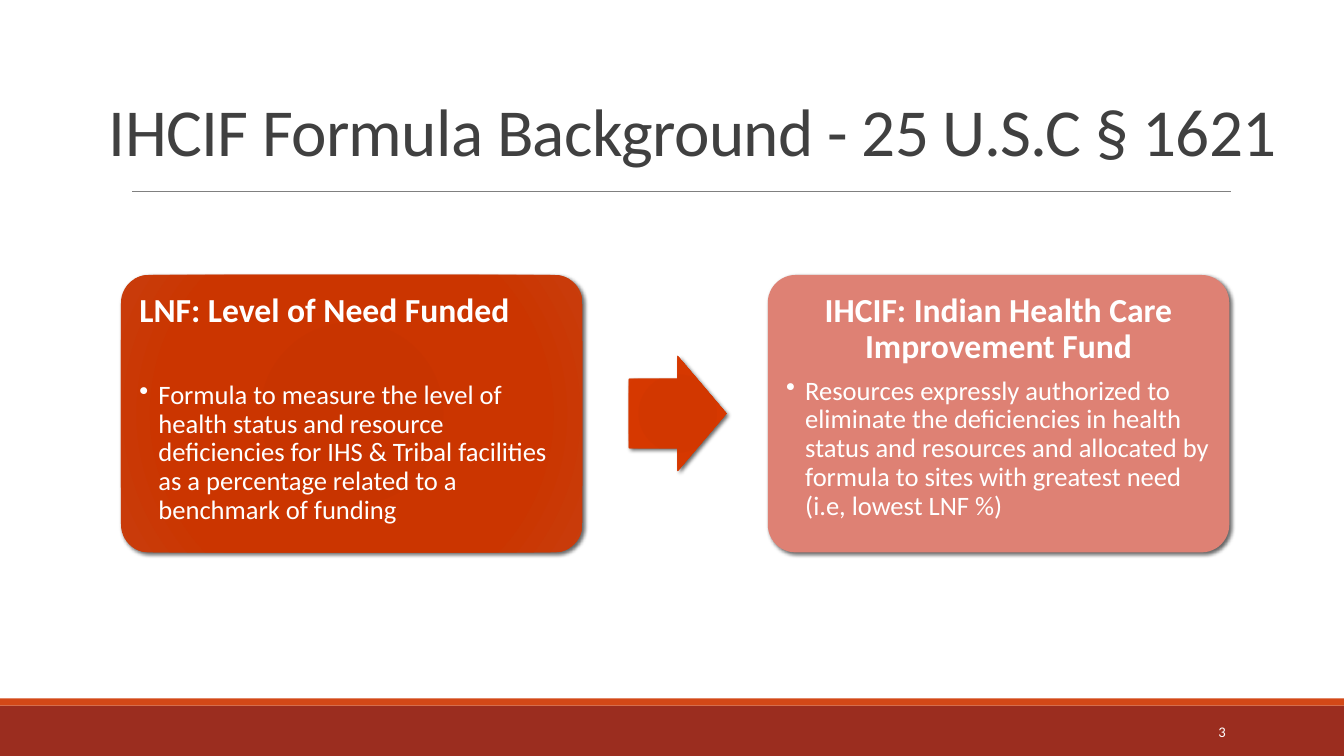
"""Build the slide that leads from the need measure to the fund it steers."""
from typing import NamedTuple

from lxml.etree import SubElement
from pptx import Presentation
from pptx.dml.color import RGBColor
from pptx.enum.shapes import MSO_CONNECTOR as Link, MSO_SHAPE as Form
from pptx.enum.text import MSO_ANCHOR as Anchor, MSO_AUTO_SIZE as Fit, PP_ALIGN as Align
from pptx.oxml.ns import qn
from pptx.shapes.autoshape import Shape
from pptx.slide import Slide
from pptx.text.text import TextFrame
from pptx.util import Cm, Pt

WIDE, HIGH = 33.87, 19.05
WHITE = "FFFFFF"
INSET = 0.46


class Box(NamedTuple):
    left: float
    top: float
    width: float
    height: float


class Card(NamedTuple):
    left: float
    paint: list[str]
    head: str
    align: Align
    gap: float
    body: str


CARDS = [
    Card(3.05, ["C63400", "C83400", "CB3500", "C83D0C"],
         "LNF: Level of Need Funded", Align.LEFT, 37,
         "Formula to measure the level of health status and resource deficiencies "
         "for IHS & Tribal facilities as a percentage related to a benchmark of funding"),
    Card(19.35, ["DE8174"],
         "IHCIF: Indian Health Care Improvement Fund", Align.CENTER, 8,
         "Resources expressly authorized to eliminate the deficiencies in health status "
         "and resources and allocated by formula to sites with greatest need "
         "(i.e, lowest LNF %)"),
]
ARROW = ["D03600", "D23700", "D63800", "D3400D"]
STOPS = [0, 34, 70, 100]


def color(code: str) -> RGBColor:
    """Turn a hex string into a colour."""
    return RGBColor.from_string(code)


def place(box: Box) -> list[Cm]:
    """Turn a box in centimetres into lengths."""
    return [Cm(side) for side in box]


def glow(shape: Shape, paint: list[str]) -> None:
    """Fill a shape with a radial blend."""
    shape.fill.gradient()
    grad = shape._element.spPr.find(qn("a:gradFill"))
    for child in list(grad):
        grad.remove(child)
    stops = SubElement(grad, qn("a:gsLst"))
    for at, code in zip(STOPS, paint):
        stop = SubElement(stops, qn("a:gs"), pos=str(at * 1000))
        SubElement(stop, qn("a:srgbClr"), val=code)
    ring = SubElement(grad, qn("a:path"), path="circle")
    SubElement(ring, qn("a:fillToRect"), {side: "100000" for side in "ltrb"})


def shade(shape: Shape) -> None:
    """Cast a soft shadow down and to the right."""
    effect = shape._element.spPr.find(qn("a:effectLst"))
    cast = SubElement(effect, qn("a:outerShdw"), blurRad=str(Pt(3)), dist=str(Pt(2)),
                      dir="2700000", algn="tl", rotWithShape="0")
    tint = SubElement(cast, qn("a:srgbClr"), val="000000")
    SubElement(tint, qn("a:alpha"), val="60000")


def draw(slide: Slide, form: Form, box: Box, paint: list[str], *,
         bends: tuple[float, ...] = (), shadow: bool = False) -> Shape:
    """Draw a preset shape with no outline."""
    shape = slide.shapes.add_shape(form, *place(box))
    for spot, bend in enumerate(bends):
        shape.adjustments[spot] = bend
    shape.line.fill.background()
    shape.shadow.inherit = False
    if len(paint) > 1:
        glow(shape, paint)
    else:
        shape.fill.solid()
        shape.fill.fore_color.rgb = color(paint[0])
    if shadow:
        shade(shape)
    return shape


def write(frame: TextFrame, text: str, *, size: float, tint: str = WHITE,
          bold: bool = False, align: Align = Align.LEFT, lead: float = 1,
          after: float = 0, bullet: bool = False, track: int = 0) -> None:
    """Write one paragraph, the first one into the empty frame."""
    para = frame.add_paragraph() if frame.text else frame.paragraphs[0]
    para.alignment, para.line_spacing = align, lead
    para.space_before, para.space_after = Pt(0), Pt(after)
    if bullet:
        props = para._p.get_or_add_pPr()
        props.set("marL", str(Cm(0.48)))
        props.set("indent", str(-Cm(0.48)))
        SubElement(props, qn("a:buChar"), char="•")
    run = para.add_run()
    run.text = text
    font = run.font
    font.name, font.size, font.bold = "Calibri", Pt(size), bold
    font.color.rgb = color(tint)
    if track:
        font._element.set("spc", str(track))


def frame(slide: Slide) -> None:
    """Draw the footer bars, the rule, the title and the page number."""
    draw(slide, Form.RECTANGLE, Box(0, 17.78, WIDE, 1.27), ["9B2D1F"])
    draw(slide, Form.RECTANGLE, Box(0, 17.6, WIDE, 0.18), ["D34817"])
    rule = slide.shapes.add_connector(Link.STRAIGHT, Cm(3.33), Cm(4.83), Cm(31.01), Cm(4.83))
    rule.line.color.rgb = color("808080")
    rule.line.width = Pt(0.5)
    SubElement(rule._element.spPr, qn("a:effectLst"))

    title = slide.shapes.title
    title.left, title.top, title.width, title.height = place(Box(2.49, 1.63, 30.33, 2.79))
    head = title.text_frame
    head.word_wrap, head.auto_size = True, Fit.NONE
    head.vertical_anchor = Anchor.BOTTOM
    write(head, "IHCIF Formula Background - 25 U.S.C § 1621",
          size=48, tint="404040", lead=0.85, track=-50)

    page = slide.shapes.add_textbox(*place(Box(27.51, 17.93, 3.63, 1.02))).text_frame
    page.word_wrap, page.vertical_anchor = True, Anchor.MIDDLE
    write(page, "3", size=10.5, align=Align.RIGHT)


def panel(slide: Slide, card: Card) -> None:
    """Draw a rounded card with its heading and bullet."""
    shape = draw(slide, Form.ROUNDED_RECTANGLE, Box(card.left, 6.93, 11.63, 6.99),
                 card.paint, bends=(0.1,), shadow=True)
    text = shape.text_frame
    text.word_wrap, text.vertical_anchor = True, Anchor.TOP
    text.margin_left = text.margin_right = Cm(INSET - 0.2)
    text.margin_top = text.margin_bottom = Cm(INSET - 0.2)
    write(text, card.head, size=24, bold=True, align=card.align, lead=0.9, after=card.gap)
    write(text, card.body, size=19, lead=0.9, bullet=True)


def main() -> None:
    """Build and save the slide."""
    deck = Presentation()
    deck.slide_width, deck.slide_height = Cm(WIDE), Cm(HIGH)
    slide = deck.slides.add_slide(deck.slide_layouts[5])
    frame(slide)
    for card in CARDS:
        panel(slide, card)
    draw(slide, Form.RIGHT_ARROW, Box(15.85, 8.97, 2.46, 2.9), ARROW,
         bends=(0.6, 0.5), shadow=True)
    deck.save("out.pptx")


if __name__ == "__main__":
    main()
